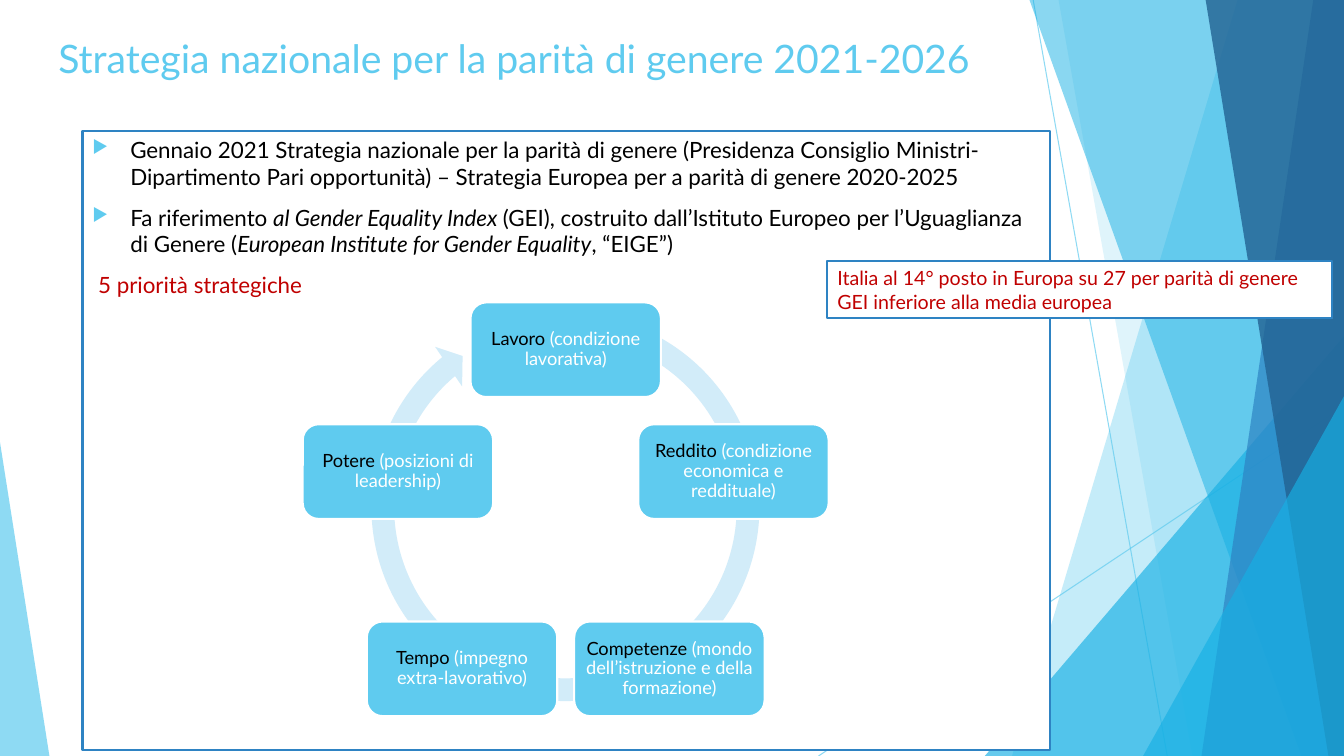
from dataclasses import dataclass
import math

from lxml import etree
from pptx import Presentation
from pptx.dml.color import RGBColor
from pptx.enum import shapes, text
from pptx.oxml.ns import qn
from pptx.util import Pt


@dataclass(frozen=True)
class Theme:
    font: str = "Lato"
    sky: str = "5FCBEF"
    cyan: str = "17B0E4"
    blue: str = "2E83C3"
    navy: str = "226292"
    pale: str = "D2ECF9"
    white: str = "FFFFFF"
    black: str = "000000"
    red: str = "C00000"
    title: float = 28
    body: float = 16
    callout: float = 14
    node: float = 13


T = Theme()
W, H = 960, 540
TOP = -0.7


def set_alpha(fill_parent, percent):
    clr = fill_parent.find(".//" + qn("a:srgbClr"))
    etree.SubElement(clr, qn("a:alpha"), val=str(percent * 1000))


def paint(sp, fill, alpha=None, line=None):
    sp.shadow.inherit = False
    sp.fill.solid()
    sp.fill.fore_color.rgb = RGBColor.from_string(fill)
    if alpha:
        set_alpha(sp._element.spPr, alpha)
    if line:
        sp.line.color.rgb = RGBColor.from_string(line)
        sp.line.width = Pt(1.5)
    else:
        sp.line.fill.background()


def add_shape(s, kind, box, fill, alpha=None, line=None, adj=()):
    sp = s.shapes.add_shape(kind, *map(Pt, box))
    for i, value in enumerate(adj):
        sp.adjustments[i] = value
    paint(sp, fill, alpha, line)
    return sp


def add_facet(s, top_x, bottom_x, fill, alpha):
    fb = s.shapes.build_freeform(Pt(top_x), Pt(TOP))
    corners = [(W, TOP), (W, H), (bottom_x, H)]
    fb.add_line_segments([(Pt(x), Pt(y)) for x, y in corners], close=True)
    paint(fb.convert_to_shape(), fill, alpha)


def add_triangle(s, box, apex, alpha, fill):
    kind = shapes.MSO_SHAPE.ISOSCELES_TRIANGLE
    add_shape(s, kind, box, fill, alpha, adj=[apex])


def add_hairline(s, x1, y1, x2, y2):
    c = s.shapes.add_connector(shapes.MSO_CONNECTOR.STRAIGHT, *map(Pt, (x1, y1, x2, y2)))
    c.line.color.rgb = RGBColor.from_string(T.sky)
    c.line.width = Pt(0.75)
    set_alpha(c.line._ln, 70)
    etree.SubElement(c._element.spPr, qn("a:effectLst"))


def add_runs(p, size, runs):
    for content, color, italic in runs:
        r = p.add_run()
        r.text = content
        r.font.name = T.font
        r.font.size = Pt(size)
        r.font.italic = italic
        r.font.color.rgb = RGBColor.from_string(color)


def add_bullet(p):
    pPr = p._p.get_or_add_pPr()
    pPr.set("marL", str(Pt(27)))
    pPr.set("indent", str(Pt(-27)))
    clr = etree.SubElement(pPr, qn("a:buClr"))
    etree.SubElement(clr, qn("a:srgbClr"), val=T.sky)
    etree.SubElement(pPr, qn("a:buSzPct"), val="80000")
    etree.SubElement(pPr, qn("a:buChar"), char="▶")


def write(sp, size, paragraphs, anchor=text.MSO_ANCHOR.TOP,
          align=text.PP_ALIGN.LEFT, before=0, spacing=1.0):
    tf = sp.text_frame
    tf.word_wrap = True
    tf.vertical_anchor = anchor
    for i, runs in enumerate(paragraphs):
        p = tf.paragraphs[0] if i == 0 else tf.add_paragraph()
        p.alignment = align
        p.space_before = Pt(before)
        p.line_spacing = spacing
        add_runs(p, size, runs)
    return tf


def add_background(s):
    add_hairline(s, 738, 0, 833.76, H)
    add_hairline(s, W, 290.16, 584.64, H)
    add_facet(s, 884.16, 722.88, T.sky, 36)
    add_facet(s, 756, 851.76, T.sky, 20)
    add_triangle(s, (703.44, 240, 256.56, 300), 1, 66, T.cyan)
    add_facet(s, 735.12, 929.52, T.cyan, 50)
    add_facet(s, 938.16, 858.24, T.blue, 70)
    add_facet(s, 861.12, 948.96, T.navy, 80)
    add_triangle(s, (816.48, 283, 143.52, 257), 1, 66, T.cyan)
    add_triangle(s, (0, 316, 35.3, 224), 0, 70, T.sky)


def add_body(s):
    sp = add_shape(s, shapes.MSO_SHAPE.RECTANGLE, (59, 93.6, 691.2, 442), T.white, line=T.blue)
    tf = write(sp, T.body, [
        [("Gennaio 2021 Strategia nazionale per la parità di genere (Presidenza Consiglio "
          "Ministri- Dipartimento Pari opportunità) – Strategia Europea per a parità di "
          "genere 2020-2025", T.black, False)],
        [("Fa riferimento ", T.black, False),
         ("al Gender Equality Index ", T.black, True),
         ("(GEI), costruito dall’Istituto Europeo per l’Uguaglianza di Genere (", T.black, False),
         ("European Institute for Gender Equality", T.black, True),
         (", “EIGE”)", T.black, False)],
        [(" 5 priorità strategiche", T.red, False)],
    ], before=10)
    for p in tf.paragraphs[:2]:
        add_bullet(p)


def add_cycle(s, priorities):
    add_shape(s, shapes.MSO_SHAPE.CIRCULAR_ARROW, (256.3, 214.6, 295.2, 295.2), T.pale,
              adj=[0.055, 3.307, 138.146, 173.625, 0.058])
    cx, cy, radius = 404.1, 375.8, 126
    w, h = 136, 67.6
    for i, (name, detail) in enumerate(priorities):
        angle = 2 * math.pi * i / len(priorities)
        x = cx + radius * math.sin(angle) - w / 2
        y = cy - radius * math.cos(angle) - h / 2
        sp = add_shape(s, shapes.MSO_SHAPE.ROUNDED_RECTANGLE, (x, y, w, h), T.sky, line=T.white)
        tf = write(sp, T.node, [[(name, T.black, False), (f" ({detail})", T.white, False)]],
                   text.MSO_ANCHOR.MIDDLE, text.PP_ALIGN.CENTER, spacing=0.9)
        tf.margin_left = tf.margin_right = Pt(3.6)
        tf.margin_top = tf.margin_bottom = Pt(3.6)


def main():
    prs = Presentation()
    prs.slide_width, prs.slide_height = Pt(W), Pt(H)
    s = prs.slides.add_slide(prs.slide_layouts[6])
    add_background(s)
    title = s.shapes.add_textbox(*map(Pt, (34.6, 20.9, 774, 76.3)))
    write(title, T.title, [[("Strategia nazionale per la parità di genere 2021-2026", T.sky, False)]])
    add_body(s)
    add_cycle(s, [
        ("Lavoro", "condizione lavorativa"),
        ("Reddito", "condizione economica e reddituale"),
        ("Competenze", "mondo dell’istruzione e della formazione"),
        ("Tempo", "impegno extra-lavorativo"),
        ("Potere", "posizioni di leadership"),
    ])
    callout = add_shape(s, shapes.MSO_SHAPE.RECTANGLE, (591, 186.5, 360.7, 41), T.white, line=T.blue)
    write(callout, T.callout, [
        [("Italia al 14° posto in Europa su 27 per parità di genere", T.red, False)],
        [("GEI inferiore alla media europea", T.red, False)],
    ])
    prs.save("out.pptx")


if __name__ == "__main__":
    main()
